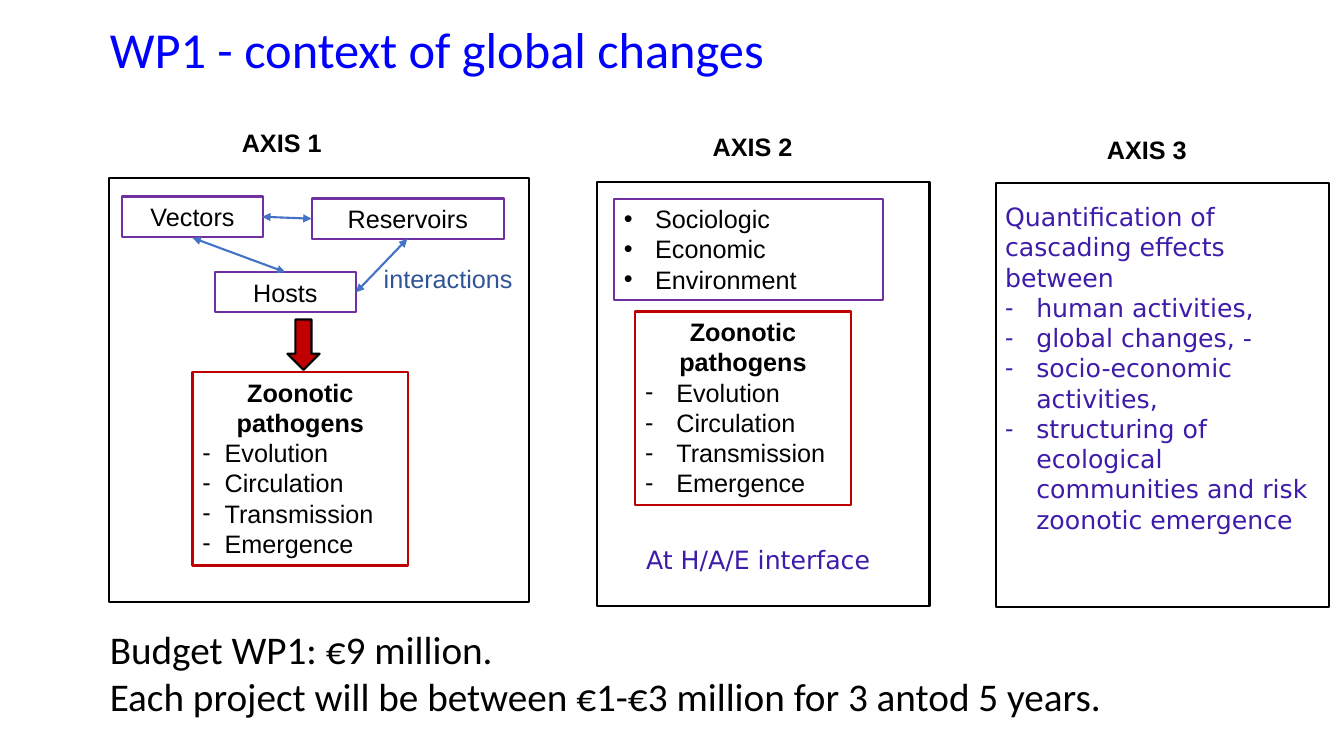
from lxml import etree
from pptx import Presentation
from pptx.dml.color import RGBColor
from pptx.enum.shapes import MSO_CONNECTOR as CONNECTOR, MSO_SHAPE as SHAPE
from pptx.enum.text import MSO_ANCHOR as ANCHOR, PP_ALIGN as ALIGN
from pptx.oxml.ns import qn
from pptx.util import Inches, Pt

COLORS = {
    "black": "000000", "title": "0000FF", "violet": "3E1CAA", "purple": "7030A0",
    "red": "C00000", "arrow": "4472C4", "interactions": "2F5597",
}
PATHOGEN_TOPICS = ["Evolution", "Circulation", "Transmission", "Emergence"]


def rgb(name):
    return RGBColor.from_string(COLORS[name])


def add_bullet(paragraph, char, indent):
    properties = paragraph._p.get_or_add_pPr()
    properties.set("marL", str(Inches(indent)))
    properties.set("indent", str(-Inches(indent)))
    etree.SubElement(properties, qn("a:buFont")).set("typeface", "Arial")
    etree.SubElement(properties, qn("a:buChar")).set("char", char)


def write(shape, lines, size=18, font="Arial", color="black", bold=False,
          align=ALIGN.LEFT, wrap=True):
    """Fill a shape with paragraphs and return them."""
    frame = shape.text_frame
    frame.word_wrap = wrap
    frame.vertical_anchor = ANCHOR.TOP
    frame.text = "\n".join(lines)
    for paragraph in frame.paragraphs:
        paragraph.alignment = align
        paragraph.font.size = Pt(size)
        paragraph.font.name = font
        paragraph.font.bold = bold
        paragraph.font.color.rgb = rgb(color)
    return frame.paragraphs


def add_text(slide, at, lines, **style):
    return write(slide.shapes.add_textbox(*map(Inches, at)), lines, **style)


def add_box(slide, at, line, fill=None, kind=SHAPE.RECTANGLE):
    shape = slide.shapes.add_shape(kind, *map(Inches, at))
    shape.shadow.inherit = False
    if fill:
        shape.fill.solid()
        shape.fill.fore_color.rgb = rgb(fill)
    else:
        shape.fill.background()
    shape.line.color.rgb = rgb(line)
    shape.line.width = Pt(1.5)
    return shape


def add_axis(slide, label, label_at, panel_at):
    add_text(slide, (*label_at, 1.27, 0.4), [label], bold=True, align=ALIGN.CENTER)
    add_box(slide, panel_at, "black")


def add_actor(slide, name, left, top, width):
    box = add_box(slide, (left, top, width, 0.4), "purple")
    write(box, [name], align=ALIGN.CENTER)


def add_pathogens(slide, left, top, indent):
    box = add_box(slide, (left, top, 2.14, 1.92), "red")
    heading, *topics = write(box, ["Zoonotic pathogens", *PATHOGEN_TOPICS])
    heading.alignment = ALIGN.CENTER
    heading.font.bold = True
    for paragraph in topics:
        add_bullet(paragraph, "-", indent)


def add_double_arrow(slide, start, end):
    connector = slide.shapes.add_connector(
        CONNECTOR.STRAIGHT, *map(Inches, (*start, *end)))
    connector.line.color.rgb = rgb("arrow")
    connector.line.width = Pt(1.5)
    line = connector.line._get_or_add_ln()
    for tag in ("a:headEnd", "a:tailEnd"):
        etree.SubElement(line, qn(tag)).set("type", "triangle")
    etree.SubElement(connector._element.spPr, qn("a:effectLst"))


def build_axis_1(slide):
    add_axis(slide, "AXIS 1", (2.16, 1.21), (1.08, 1.77, 4.17, 4.2))
    add_actor(slide, "Vectors", 1.21, 1.95, 1.4)
    add_actor(slide, "Reservoirs", 3.09, 1.97, 1.91)
    add_actor(slide, "Hosts", 2.13, 2.7, 1.4)
    add_text(slide, (3.6, 2.56, 1.69, 0.4), ["interactions"],
             color="interactions", align=ALIGN.CENTER)
    add_double_arrow(slide, (1.91, 2.36), (2.83, 2.7))
    add_double_arrow(slide, (2.6, 2.15), (3.09, 2.17))
    add_double_arrow(slide, (3.53, 2.9), (4.04, 2.37))
    add_box(slide, (2.85, 3.17, 0.32, 0.5), "black", "red", SHAPE.DOWN_ARROW)
    add_pathogens(slide, 1.91, 3.69, indent=0.22)


def build_axis_2(slide):
    add_axis(slide, "AXIS 2", (6.83, 1.25), (5.92, 1.81, 3.3, 4.2))
    drivers = add_box(slide, (6.09, 1.97, 2.67, 1.01), "purple")
    for paragraph in write(drivers, ["Sociologic", "Economic", "Environment"]):
        add_bullet(paragraph, "•", 0.31)
    add_pathogens(slide, 6.3, 3.09, indent=0.31)
    add_text(slide, (6.31, 5.35, 2.5, 0.4), ["At H/A/E interface"],
             font="DejaVu Sans", color="violet", wrap=False)


def build_axis_3(slide):
    add_axis(slide, "AXIS 3", (10.74, 1.28), (9.88, 1.82, 3.3, 4.2))
    effects = add_text(slide, (9.87, 1.95, 3.26, 4.07), [
        "Quantification of cascading effects between",
        "human activities,",
        "global changes, -",
        "socio-economic activities,",
        "structuring of ecological communities and risk zoonotic emergence",
    ], font="DejaVu Sans", color="violet")
    for paragraph in effects[1:]:
        add_bullet(paragraph, "-", 0.31)


def main():
    presentation = Presentation()
    presentation.slide_width = Inches(13.33)
    presentation.slide_height = Inches(7.5)
    slide = presentation.slides.add_slide(presentation.slide_layouts[6])

    # Title
    add_text(slide, (0.99, 0.13, 6.75, 0.71), ["WP1 - context of global changes"],
             size=36, font="Calibri", color="title", wrap=False)

    # Research axes
    build_axis_1(slide)
    build_axis_2(slide)
    build_axis_3(slide)

    # Budget
    add_text(slide, (0.99, 6.15, 11.68, 1.04), [
        "Budget WP1: €9 million.",
        "Each project will be between €1-€3 million for 3 antod 5 years.",
    ], size=28, font="Calibri")

    presentation.save("out.pptx")


if __name__ == "__main__":
    main()
